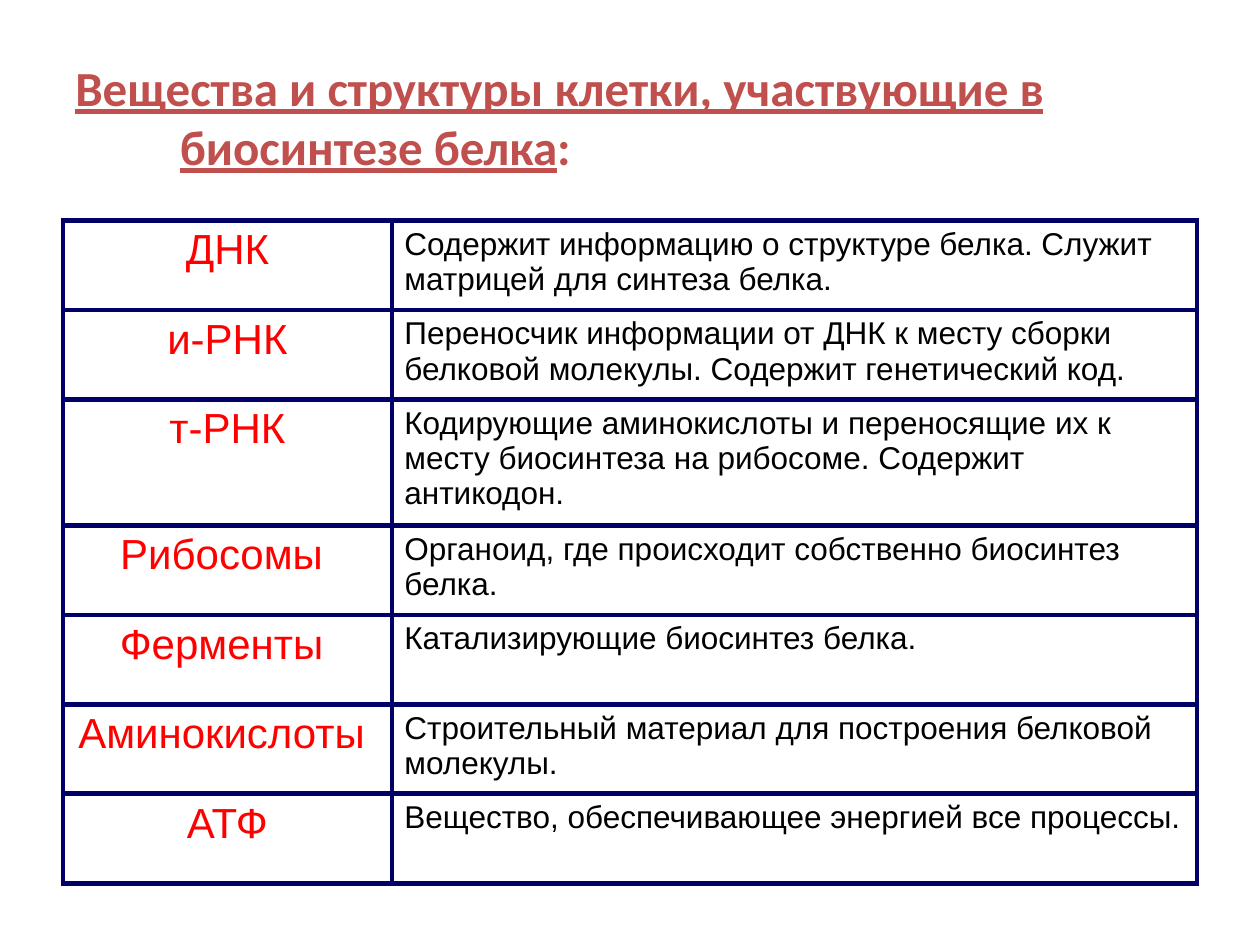
from lxml import etree
from pptx import Presentation
from pptx import util as u
from pptx.dml import color as c
from pptx.enum import text as t
from pptx.oxml import ns

HUES = {"title": "C0504D", "name": "FF0000", "role": "000000",
        "edge": "000066", "back": "FFFFFF"}
HEAD = {"name": "Calibri", "size": u.Pt(28), "bold": True}
NAME = {"name": "Arial", "size": u.Pt(24), "bold": False}
ROLE = {"name": "Arial", "size": u.Pt(18), "bold": False}
COLS = [("name", NAME, t.PP_ALIGN.CENTER, 2.61),
        ("role", ROLE, t.PP_ALIGN.LEFT, 6.39)]
ROWS = [
    ("ДНК", "Содержит информацию о структуре белка. Служит матрицей для синтеза белка."),
    ("и-РНК", "Переносчик информации от ДНК к месту сборки белковой молекулы. Содержит генетический код."),
    ("т-РНК", "Кодирующие аминокислоты и переносящие их к месту биосинтеза на рибосоме. Содержит антикодон."),
    ("Рибосомы ", "Органоид, где происходит собственно биосинтез белка."),
    ("Ферменты ", "Катализирующие биосинтез белка."),
    ("Аминокислоты ", "Строительный материал для построения белковой молекулы."),
    ("АТФ", "Вещество, обеспечивающее энергией все процессы."),
]


def hue(key):
    return c.RGBColor.from_string(HUES[key])


def add_run(para, words, style, key):
    run = para.add_run()
    run.text = words
    for attr, value in style.items():
        setattr(run.font, attr, value)
    run.font.color.rgb = hue(key)


def add_edges(cell):
    props = cell._tc.get_or_add_tcPr()
    for i, side in enumerate(("lnL", "lnR", "lnT", "lnB")):
        line = etree.Element(ns.qn("a:" + side), w=str(u.Pt(3)))
        fill = etree.SubElement(line, ns.qn("a:solidFill"))
        etree.SubElement(fill, ns.qn("a:srgbClr"), val=HUES["edge"])
        props.insert(i, line)


def add_title(slide, box):
    frame = slide.shapes.add_textbox(*box).text_frame
    frame.word_wrap = True
    frame.vertical_anchor = t.MSO_ANCHOR.MIDDLE
    para = frame.paragraphs[0]
    props = para._p.get_or_add_pPr()
    props.set("marL", str(u.Inches(0.83)))
    props.set("indent", str(u.Inches(-0.83)))
    add_run(para, "Вещества и структуры клетки, участвующие в биосинтезе белка",
            {**HEAD, "underline": True}, "title")
    add_run(para, ":", HEAD, "title")


def add_grid(slide, box):
    grid = slide.shapes.add_table(len(ROWS), len(COLS), *box).table
    grid.first_row = grid.horz_banding = False
    for col, (_, _, _, width) in zip(grid.columns, COLS):
        col.width = u.Inches(width)
    for row, texts in zip(grid.rows, ROWS):
        for cell, words, (key, style, align, _) in zip(row.cells, texts, COLS):
            cell.fill.solid()
            cell.fill.fore_color.rgb = hue("back")
            add_edges(cell)
            para = cell.text_frame.paragraphs[0]
            para.alignment = align
            add_run(para, words, style, key)


def main():
    deck = Presentation()
    deck.slide_width, deck.slide_height = u.Inches(10), u.Inches(7.5)
    slide = deck.slides.add_slide(deck.slide_layouts[6])
    left, width = u.Inches(0.5), u.Inches(9)
    add_title(slide, (left, u.Inches(0.3), width, u.Inches(1.25)))
    add_grid(slide, (left, u.Inches(1.75), width, u.Inches(0.71) * len(ROWS)))
    deck.save("out.pptx")


if __name__ == "__main__":
    main()
